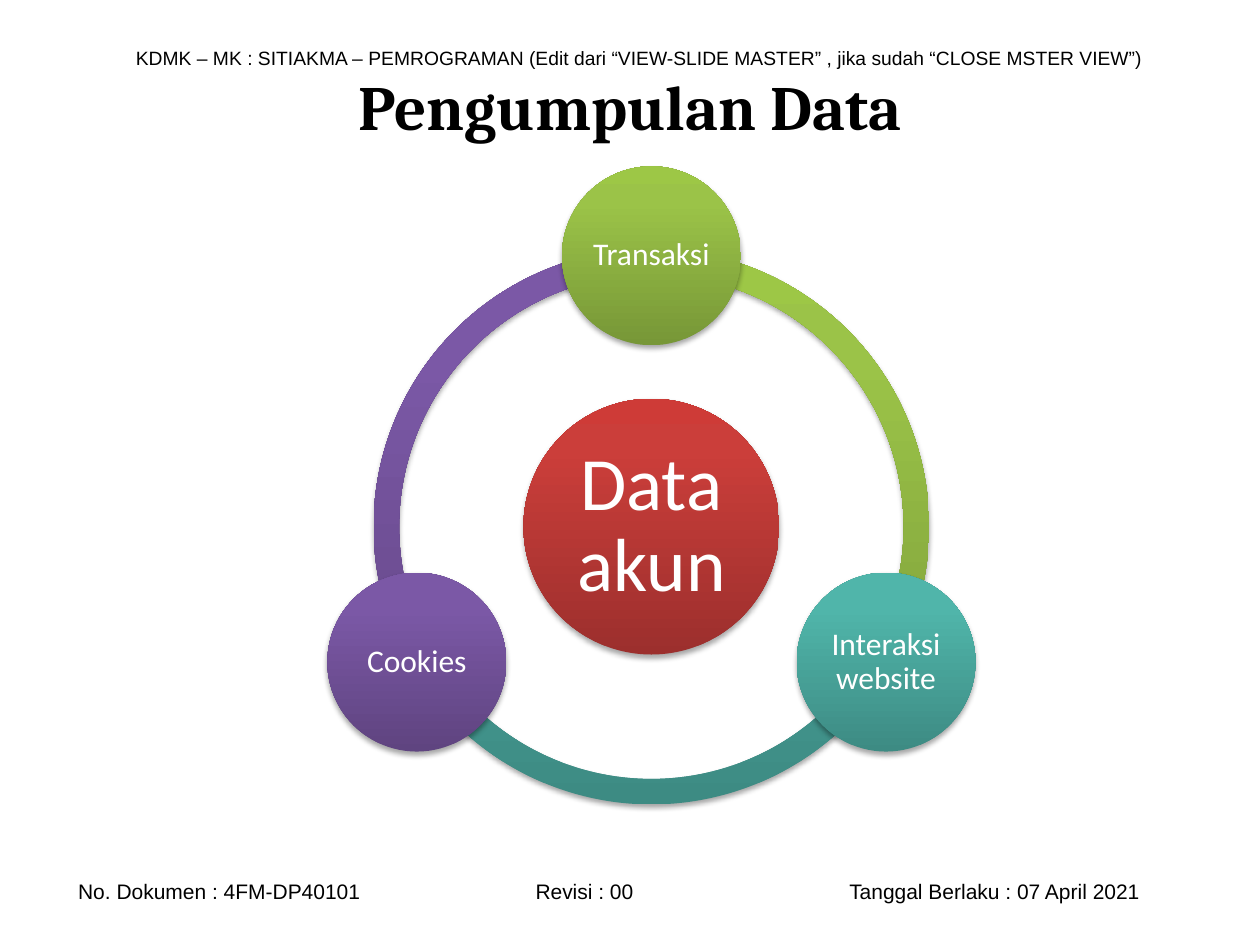
from copy import deepcopy
from math import cos, radians, sin

from lxml.etree import SubElement
from pptx import Presentation
from pptx.dml.color import RGBColor
from pptx.enum.shapes import MSO_SHAPE
from pptx.enum.text import MSO_ANCHOR, MSO_AUTO_SIZE, PP_ALIGN
from pptx.oxml.ns import qn
from pptx.util import Inches, Pt

RED = ("9C2F2D", "CB3E3A", "CE3B37")
GREEN = ("779737", "9BC348", "9DC746")
TEAL = ("3D8B83", "50B5AA", "4EB8AC")
PURPLE = ("5F4480", "7B58A6", "7C57A8")

CENTER_X, CENTER_Y = 5.17, 4.18
ORBIT, RING_SIZE = 2.15, 4.41
NODE_SIZE, CORE_SIZE = 1.42, 2.03
ARCS = [(PURPLE, 90, 162), (TEAL, 18, 90), (GREEN, 162, 18)]
NODES = [("Transaksi", GREEN, -90), ("Interaksi website", TEAL, 30), ("Cookies", PURPLE, 150)]


def color(value):
    return RGBColor.from_string(value)


class RadialSlide:
    """Holds the text style and the current slide, and draws its elements."""

    def __init__(self, presentation):
        self.slide = presentation.slides.add_slide(presentation.slide_layouts[6])
        self.body_font = "Calibri"

    def fill_text(self, frame, text, size, font, text_color, align, margins, bold=False):
        left, top, right, bottom = margins
        frame_format = {
            "word_wrap": True, "vertical_anchor": MSO_ANCHOR.MIDDLE,
            "margin_left": Inches(left), "margin_top": Inches(top),
            "margin_right": Inches(right), "margin_bottom": Inches(bottom),
        }
        for name, value in frame_format.items():
            setattr(frame, name, value)
        paragraph = frame.paragraphs[0]
        paragraph.alignment = align
        run = paragraph.add_run()
        run.text = text
        for name, value in {"name": font, "size": Pt(size), "bold": bold}.items():
            setattr(run.font, name, value)
        run.font.color.rgb = color(text_color)
        return paragraph

    def text(self, box, text, size, font, align, margins=(0.1, 0.05, 0.1, 0.05),
             bold=False, tabs=(), grow=False):
        frame = self.slide.shapes.add_textbox(*map(Inches, box)).text_frame
        paragraph = frame.paragraphs[0]
        if tabs:
            tab_list = SubElement(paragraph._p.get_or_add_pPr(), qn("a:tabLst"))
            for position in tabs:
                SubElement(tab_list, qn("a:tab"), pos=str(Inches(position)), algn="l")
        self.fill_text(frame, text, size, font, "000000", align, margins, bold)
        if grow:
            frame.auto_size = MSO_AUTO_SIZE.SHAPE_TO_FIT_TEXT

    def shaded(self, kind, x, y, size, shades):
        box = (x - size / 2, y - size / 2, size, size)
        shape = self.slide.shapes.add_shape(kind, *map(Inches, box))
        shape.line.fill.background()
        shape.fill.gradient()
        shape.fill.gradient_angle = 90
        properties = shape._element.spPr
        first_stop = properties.find(qn("a:gradFill")).find(qn("a:gsLst"))[0]
        first_stop.addnext(deepcopy(first_stop))
        for stop, position, shade in zip(shape.fill.gradient_stops, (0, 0.8, 1), shades):
            stop.position = position
            stop.color.rgb = color(shade)
        shape.shadow.inherit = False
        shadow = SubElement(properties.find(qn("a:effectLst")), qn("a:outerShdw"),
                            blurRad=str(Pt(3.1)), dist=str(Pt(1.8)),
                            dir="5400000", rotWithShape="0")
        shadow_color = SubElement(shadow, qn("a:srgbClr"), val="000000")
        SubElement(shadow_color, qn("a:alpha"), val="35000")
        return shape

    def arc(self, shades, start, end):
        shape = self.shaded(MSO_SHAPE.BLOCK_ARC, CENTER_X, CENTER_Y, RING_SIZE, shades)
        for index, value in enumerate((start, end, 0.046)):
            shape.adjustments[index] = value

    def circle(self, text, x, y, size, shades, text_size, margin):
        shape = self.shaded(MSO_SHAPE.OVAL, x, y, size, shades)
        paragraph = self.fill_text(shape.text_frame, text, text_size, self.body_font,
                                   "FFFFFF", PP_ALIGN.CENTER, (margin,) * 4)
        paragraph.line_spacing = 0.9


def main():
    presentation = Presentation()
    presentation.slide_width = Inches(10)
    presentation.slide_height = Inches(7.5)
    page = RadialSlide(presentation)
    page.text((0.98, 0.31, 8.35, 0.29),
              "KDMK – MK : SITIAKMA – PEMROGRAMAN (Edit dari “VIEW-SLIDE MASTER” , "
              "jika sudah “CLOSE MSTER VIEW”)", 11, "Arial", PP_ALIGN.JUSTIFY, grow=True)
    page.text((0.2, 6.92, 9.45, 0.3),
              "No. Dokumen : 4FM-DP40101\tRevisi : 00\tTanggal Berlaku : 07 April 2021",
              12, "Arial", PP_ALIGN.JUSTIFY, margins=(0.42, 0.05, 0.1, 0.05),
              tabs=(3.63, 6.12), grow=True)
    page.text((0.5, 0.21, 9, 1.25), "Pengumpulan Data", 36, "Cambria",
              PP_ALIGN.CENTER, bold=True)
    for shades, start, end in ARCS:
        page.arc(shades, start, end)
    page.circle("Data akun", CENTER_X, CENTER_Y, CORE_SIZE, RED, 43, 0.06)
    for label, shades, angle in NODES:
        x = CENTER_X + ORBIT * cos(radians(angle))
        y = CENTER_Y + ORBIT * sin(radians(angle))
        page.circle(label, x, y, NODE_SIZE, shades, 18, 0.03)
    presentation.save("out.pptx")


if __name__ == "__main__":
    main()
